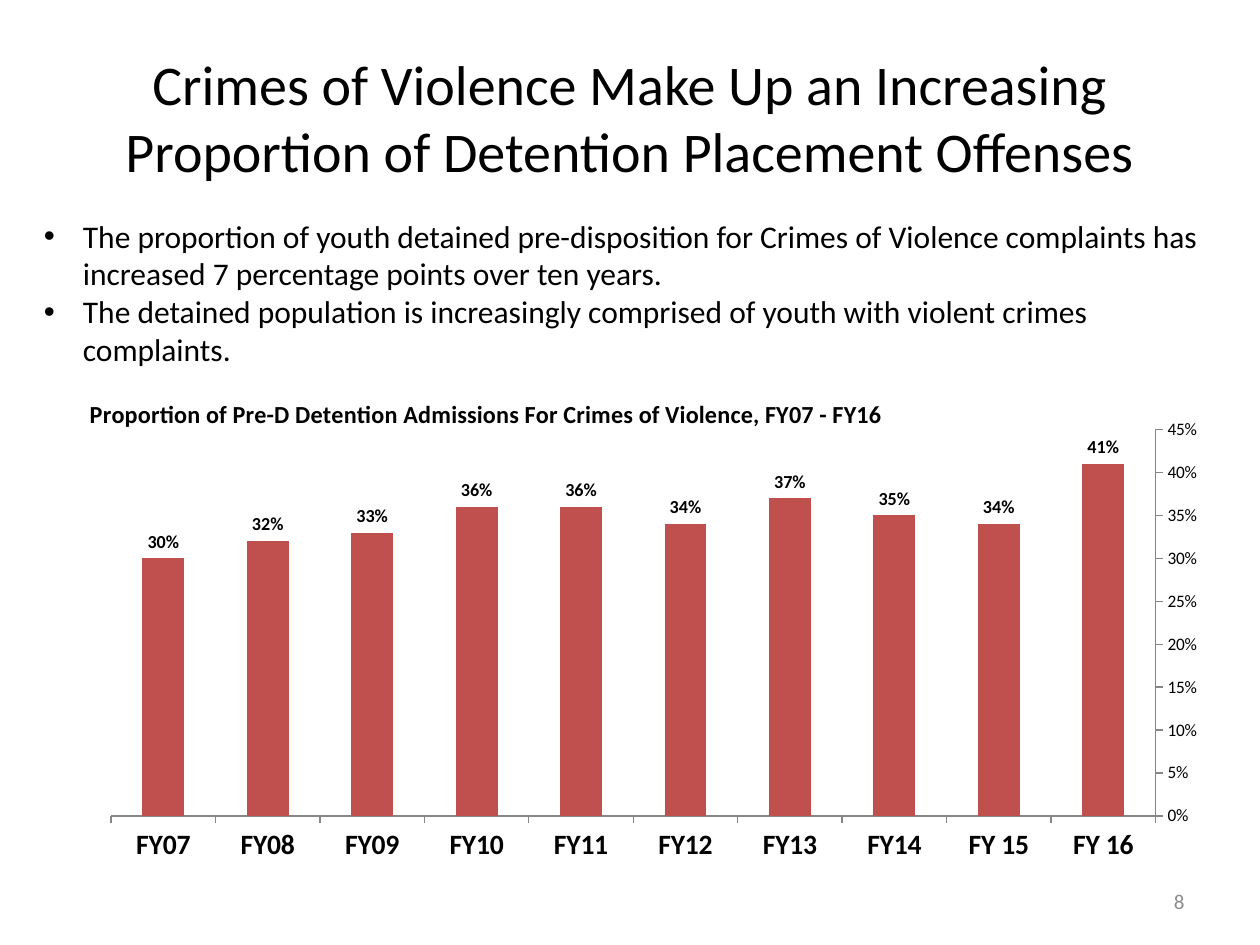
from lxml import etree
from pptx import Presentation
from pptx.chart.data import CategoryChartData
from pptx.dml.color import RGBColor
from pptx.enum.chart import XL_AXIS_CROSSES as Crosses
from pptx.enum.chart import XL_CHART_TYPE as ChartType
from pptx.enum.chart import XL_LABEL_POSITION as LabelPosition
from pptx.enum.chart import XL_TICK_MARK as TickMark
from pptx.enum.text import MSO_ANCHOR as Anchor
from pptx.enum.text import PP_ALIGN as Align
from pptx.oxml.ns import qn
from pptx.util import Inches, Pt

TITLE = "Crimes of Violence Make Up an Increasing Proportion of Detention Placement Offenses"
BULLETS = [
    "The proportion of youth detained pre-disposition for Crimes of Violence complaints has "
    "increased 7 percentage points over ten years.",
    "The detained population is increasingly comprised of youth with violent crimes complaints.",
]
PAGE_NUMBER = "8"
CHART_TITLE = "Proportion of Pre-D Detention Admissions For Crimes of Violence, FY07 - FY16"
SHARES = {
    "FY 16": 0.41, "FY 15": 0.34, "FY14": 0.35, "FY13": 0.37, "FY12": 0.34,
    "FY11": 0.36, "FY10": 0.36, "FY09": 0.33, "FY08": 0.32, "FY07": 0.30,
}

FONT = "Calibri"
BLACK = RGBColor(0x00, 0x00, 0x00)
GRAY = RGBColor(0x8C, 0x8C, 0x8C)
AXIS_GRAY = RGBColor(0x86, 0x86, 0x86)
RED = RGBColor(0xC0, 0x50, 0x4D)


def style_font(font, size, color=BLACK, bold=False):
    font.name = FONT
    font.size = Pt(size)
    font.bold = bold
    font.color.rgb = color


def add_text(page, place, lines, size, color=BLACK, align=Align.LEFT, anchor=Anchor.MIDDLE):
    box = page.shapes.add_textbox(*map(Inches, place))
    frame = box.text_frame
    frame.word_wrap = True
    frame.vertical_anchor = anchor
    frame.text = "\n".join(lines)
    for para in frame.paragraphs:
        para.alignment = align
        style_font(para.font, size, color)
    return frame


def add_bullet(para):
    props = para._p.get_or_add_pPr()
    props.set("marL", str(Inches(0.31)))
    props.set("indent", str(-Inches(0.31)))
    font = etree.Element(qn("a:buFont"), typeface="Arial")
    bullet = etree.Element(qn("a:buChar"), char="•")
    props.insert(0, font)
    font.addnext(bullet)


def manual_layout(**settings):
    layout = etree.Element(qn("c:layout"))
    manual = etree.SubElement(layout, qn("c:manualLayout"))
    for name, value in settings.items():
        etree.SubElement(manual, qn(f"c:{name}"), val=str(value))
    return layout


def drop_layout(parent):
    for layout in parent.findall(qn("c:layout")):
        parent.remove(layout)


def add_share_chart(page):
    data = CategoryChartData(number_format="0%")
    data.categories = list(SHARES)
    data.add_series("Series 1", list(SHARES.values()))
    place = map(Inches, (0.5, 3.08, 9, 3.83))
    chart = page.shapes.add_chart(ChartType.COLUMN_CLUSTERED, *place, data).chart
    style_font(chart.font, 10)
    chart.has_legend = False

    chart.has_title = True
    heading = chart.chart_title.text_frame
    heading.text = CHART_TITLE
    style_font(heading.paragraphs[0].font, 14, bold=True)

    years, shares = chart.category_axis, chart.value_axis
    years.reverse_order = True
    years.crosses = Crosses.MAXIMUM
    shares.minimum_scale, shares.maximum_scale, shares.major_unit = 0, 0.45, 0.05
    shares.has_major_gridlines = False
    shares.tick_labels.number_format = "0%"
    shares.tick_labels.number_format_is_linked = False
    for axis, size, bold in ((years, 16, True), (shares, 10, False)):
        axis.major_tick_mark = TickMark.OUTSIDE
        axis.format.line.color.rgb = AXIS_GRAY
        style_font(axis.tick_labels.font, size, bold=bold)

    plot = chart.plots[0]
    plot.gap_width = 150
    plot.vary_by_categories = False
    bars = plot.series[0]
    bars.format.fill.solid()
    bars.format.fill.fore_color.rgb = RED
    labels = bars.data_labels
    labels.show_value = True
    labels.position = LabelPosition.OUTSIDE_END
    labels.number_format = "0%"
    labels.number_format_is_linked = False
    style_font(labels.font, 10.5, bold=True)

    root = chart.element.find(qn("c:chart"))
    title, area = root.find(qn("c:title")), root.find(qn("c:plotArea"))
    drop_layout(title)
    drop_layout(area)
    title.find(qn("c:tx")).addnext(manual_layout(xMode="edge", yMode="edge", x=0.02, y=0.01))
    title.find(qn("c:overlay")).set("val", "1")
    area.insert(0, manual_layout(
        layoutTarget="inner", xMode="edge", yMode="edge", x=0.043, y=0.086, w=0.934, h=0.801))


def main():
    deck = Presentation()
    deck.slide_width, deck.slide_height = Inches(10), Inches(7.5)
    page = deck.slides.add_slide(deck.slide_layouts[6])
    add_text(page, (0.5, 0.3, 9, 1.25), [TITLE], 32, align=Align.CENTER)
    add_text(page, (7.17, 6.95, 2.33, 0.4), [PAGE_NUMBER], 12, GRAY, Align.RIGHT)
    add_share_chart(page)
    body = add_text(page, (0.25, 1.67, 9.5, 1.31), BULLETS, 18, anchor=Anchor.TOP)
    for para in body.paragraphs:
        add_bullet(para)
    deck.save("out.pptx")


if __name__ == "__main__":
    main()
